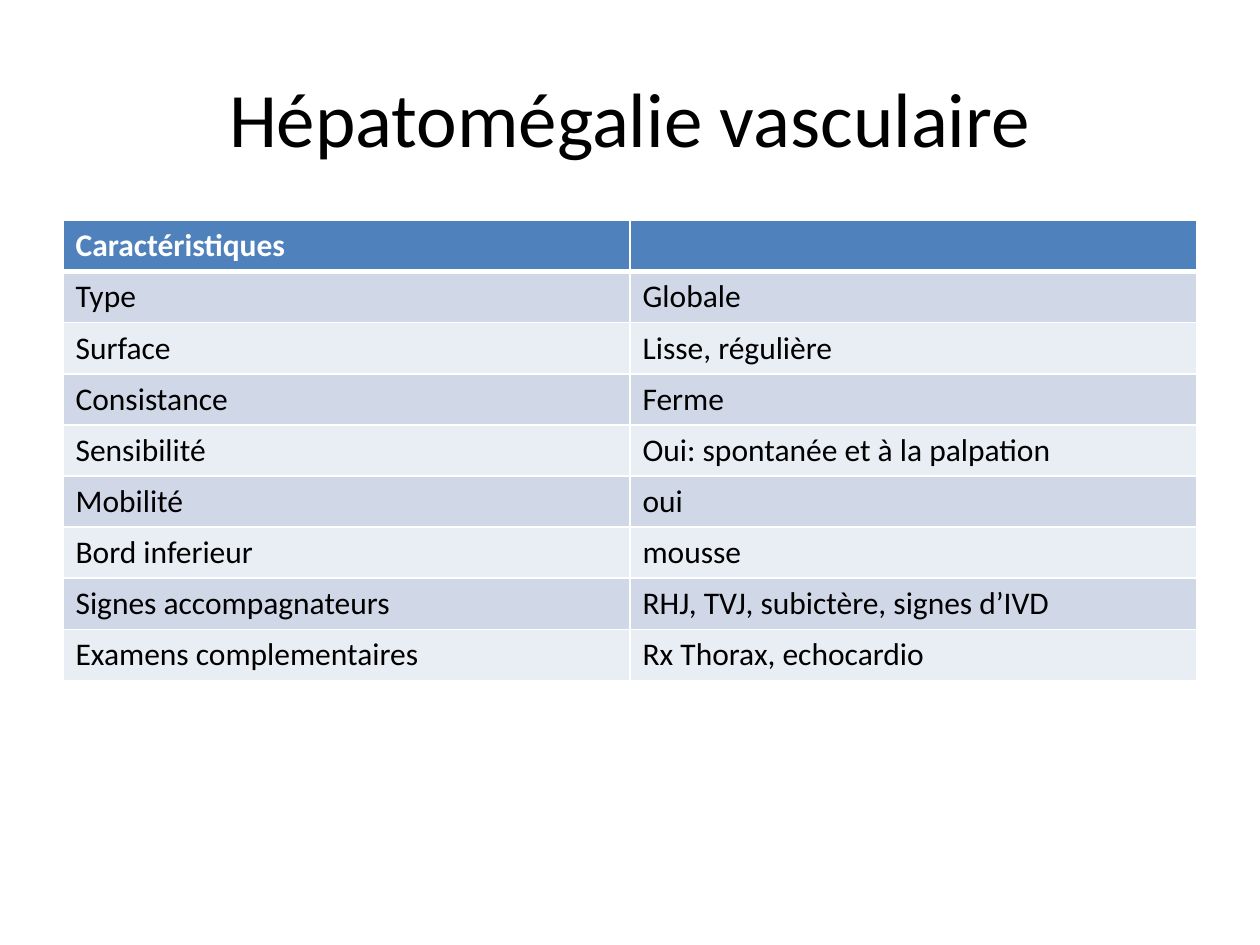
from lxml import etree
from pptx import Presentation
from pptx.dml.color import RGBColor
from pptx.enum.text import MSO_ANCHOR, PP_ALIGN
from pptx.oxml.ns import qn
from pptx.util import Inches, Pt

MIDDLE = MSO_ANCHOR.MIDDLE
CENTER = PP_ALIGN.CENTER
BLANK_LAYOUT = 6
FONT = "Calibri"
COLORS = {
    "text": "000000",
    "header_text": "FFFFFF",
    "header": "4F81BD",
    "odd_row": "D0D8E8",
    "even_row": "E9EDF4",
    "border": "FFFFFF",
}
TITLE = "Hépatomégalie vasculaire"
ROWS = [
    ("Caractéristiques", ""),
    ("Type", "Globale"),
    ("Surface", "Lisse, régulière"),
    ("Consistance", "Ferme"),
    ("Sensibilité", "Oui: spontanée et à la palpation"),
    ("Mobilité", "oui"),
    ("Bord inferieur", "mousse"),
    ("Signes accompagnateurs", "RHJ, TVJ, subictère, signes d’IVD"),
    ("Examens complementaires", "Rx Thorax, echocardio"),
]


def write_text(paragraph, text, color, **formats):
    """Write one run in the slide font with the given format values."""
    run = paragraph.add_run()
    run.text = text
    run.font.color.rgb = RGBColor.from_string(COLORS[color])
    for name, value in {"name": FONT, **formats}.items():
        setattr(run.font, name, value)


def add_title(slide):
    """Add the centred slide title."""
    box = slide.shapes.add_textbox(Inches(0.5), Inches(0.3), Inches(9), Inches(1.25))
    box.text_frame.word_wrap = True
    box.text_frame.vertical_anchor = MIDDLE
    paragraph = box.text_frame.paragraphs[0]
    paragraph.alignment = CENTER
    write_text(paragraph, TITLE, "text", size=Pt(44))


def set_borders(cell, widths):
    """Draw solid cell borders with a width in points for each side."""
    properties = cell._tc.get_or_add_tcPr()
    for side, width in widths.items():
        line = etree.SubElement(properties, qn(f"a:ln{side}"), w=str(Pt(width)))
        fill = etree.SubElement(line, qn("a:solidFill"))
        etree.SubElement(fill, qn("a:srgbClr"), val=COLORS["border"])


def format_cell(cell, row_index, text):
    """Give a cell its borders, fill and text according to its row."""
    is_header = row_index == 0
    set_borders(cell, {
        "L": 1,
        "R": 1,
        "T": 3 if row_index == 1 else 1,
        "B": 3 if is_header else 1,
    })
    band = "odd_row" if row_index % 2 else "even_row"
    cell.fill.solid()
    cell.fill.fore_color.rgb = RGBColor.from_string(COLORS["header" if is_header else band])
    if text:
        color = "header_text" if is_header else "text"
        write_text(cell.text_frame.paragraphs[0], text, color, size=Pt(18), bold=is_header)


def add_characteristics_table(slide):
    """Add the two-column table of clinical characteristics."""
    table = slide.shapes.add_table(
        len(ROWS), len(ROWS[0]), Inches(0.5), Inches(1.75), Inches(9), Inches(3.65)
    ).table
    for row_index, row in enumerate(ROWS):
        for column_index, text in enumerate(row):
            format_cell(table.cell(row_index, column_index), row_index, text)


def main():
    """Build and save the slide."""
    presentation = Presentation()
    presentation.slide_width = Inches(10)
    presentation.slide_height = Inches(7.5)
    slide = presentation.slides.add_slide(presentation.slide_layouts[BLANK_LAYOUT])
    add_title(slide)
    add_characteristics_table(slide)
    presentation.save("out.pptx")


if __name__ == "__main__":
    main()
